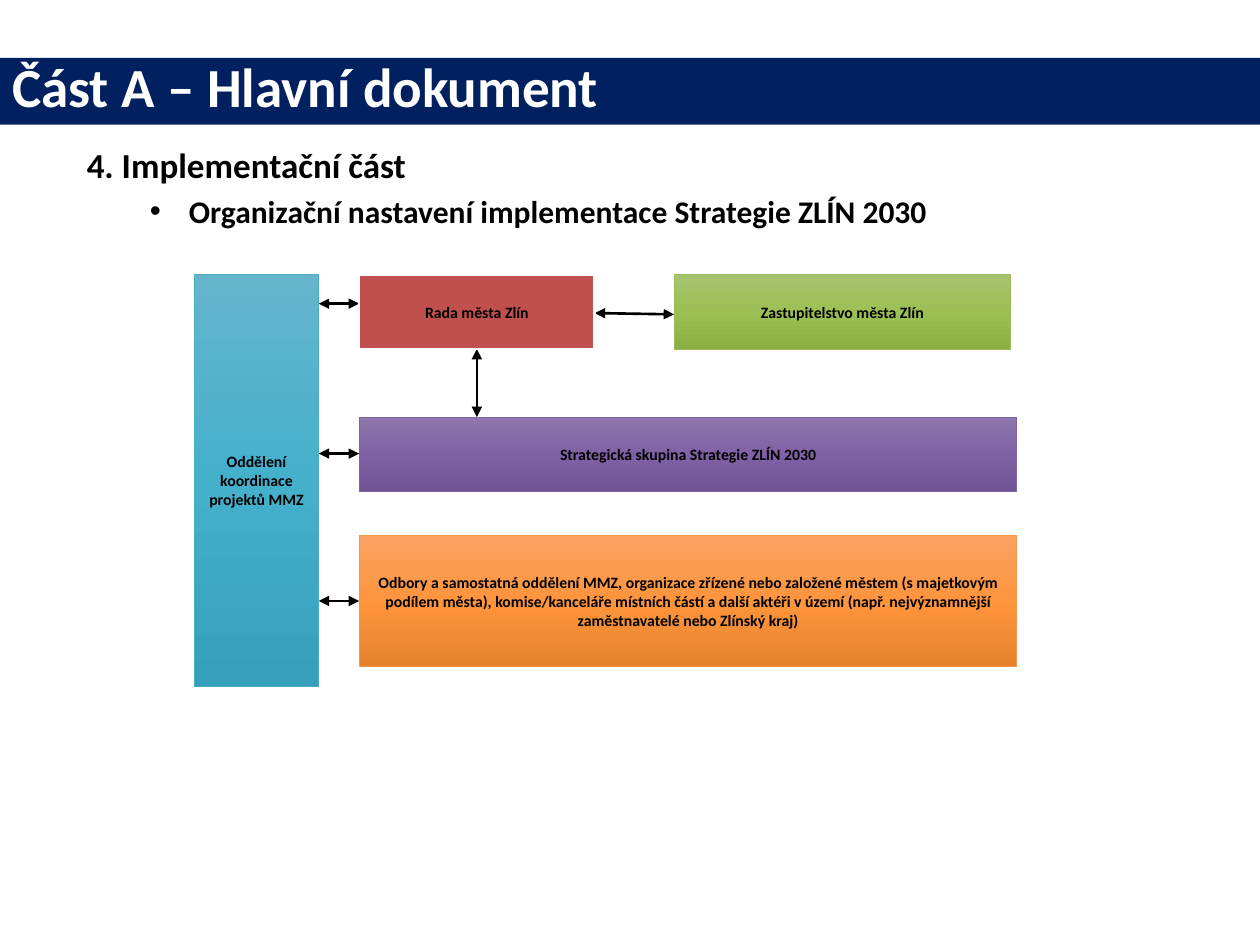
from lxml.etree import SubElement
from pptx import Presentation
from pptx.dml.color import RGBColor
from pptx.enum.shapes import MSO_CONNECTOR as Connector, MSO_SHAPE as Shape
from pptx.enum.text import MSO_ANCHOR as Anchor, PP_ALIGN as Align
from pptx.oxml.ns import qn
from pptx.util import Inches, Pt

WHITE = RGBColor(0xFF, 0xFF, 0xFF)
BLACK = RGBColor(0, 0, 0)
NAVY = RGBColor(0x00, 0x20, 0x60)
RED = RGBColor(0xC0, 0x50, 0x4D)
# Each gradient: top, middle and bottom colour
TEAL_SHADES = [RGBColor(0x65, 0xB5, 0xCD), RGBColor(0x45, 0xB0, 0xCC), RGBColor(0x35, 0x9F, 0xBC)]
PURPLE_SHADES = [RGBColor(0x8E, 0x77, 0xAC), RGBColor(0x80, 0x61, 0xA5), RGBColor(0x70, 0x52, 0x95)]
ORANGE_SHADES = [RGBColor(0xFA, 0xA2, 0x63), RGBColor(0xFF, 0x95, 0x3D), RGBColor(0xE5, 0x83, 0x2B)]
GREEN_SHADES = [RGBColor(0xA6, 0xC3, 0x6F), RGBColor(0x9D, 0xC0, 0x54), RGBColor(0x8C, 0xAF, 0x44)]
TEAL = RGBColor(0x4B, 0xAC, 0xC6)
PURPLE = RGBColor(0x80, 0x64, 0xA2)
ORANGE = RGBColor(0xF7, 0x96, 0x46)
GREEN = RGBColor(0x9B, 0xBB, 0x59)


def write(paragraph, text, size, color=BLACK, align=Align.LEFT, before=0, after=0, spacing=1.0):
    run = paragraph.add_run()
    run.text = text
    run.font.name = "Calibri"
    run.font.size = Pt(size)
    run.font.bold = True
    run.font.color.rgb = color
    paragraph.alignment = align
    paragraph.space_before = Pt(before)
    paragraph.space_after = Pt(after)
    paragraph.line_spacing = spacing


def indent(paragraph, margin, hanging, bullet=None):
    props = paragraph._p.get_or_add_pPr()
    props.set("marL", str(Inches(margin)))
    props.set("indent", str(-Inches(hanging)))
    if bullet:
        SubElement(props, qn("a:buFont"), typeface="Arial")
        SubElement(props, qn("a:buChar"), char=bullet)


def fill_gradient(fill, shades):
    """Fill from top to bottom with evenly spaced shades."""
    fill.gradient()
    fill.gradient_angle = 270
    stops = fill._xPr.find(qn("a:gradFill")).find(qn("a:gsLst"))
    for stop in list(stops):
        stops.remove(stop)
    for i, shade in enumerate(shades):
        position = 100000 * i // (len(shades) - 1)
        stop = SubElement(stops, qn("a:gs"), pos=str(position))
        SubElement(stop, qn("a:srgbClr"), val=str(shade))


def add_box(slide, left, top, width, height, fill, line=None, line_width=0.5):
    """Add a rectangle; fill is one colour or a list of gradient shades."""
    box = slide.shapes.add_shape(
        Shape.RECTANGLE, Inches(left), Inches(top), Inches(width), Inches(height))
    box.shadow.inherit = False
    if isinstance(fill, list):
        fill_gradient(box.fill, fill)
    else:
        box.fill.solid()
        box.fill.fore_color.rgb = fill
    if line is None:
        box.line.fill.background()
    else:
        box.line.color.rgb = line
        box.line.width = Pt(line_width)
    box.text_frame.word_wrap = True
    box.text_frame.vertical_anchor = Anchor.MIDDLE
    return box


def add_double_arrow(slide, x1, y1, x2, y2):
    arrow = slide.shapes.add_connector(
        Connector.STRAIGHT, Inches(x1), Inches(y1), Inches(x2), Inches(y2))
    arrow.line.color.rgb = BLACK
    arrow.line.width = Pt(1.5)
    line = arrow.line._get_or_add_ln()
    for end in ("a:headEnd", "a:tailEnd"):
        SubElement(line, qn(end), type="triangle")
    SubElement(arrow._element.spPr, qn("a:effectLst"))


def add_title_bar(slide, left, top, width, height):
    bar = add_box(slide, left, top, width, height, NAVY)
    write(bar.text_frame.paragraphs[0], "Část A – Hlavní dokument", 31.5, color=WHITE, spacing=0.8)


def add_outline(slide, left, top, width, height):
    frame = slide.shapes.add_textbox(
        Inches(left), Inches(top), Inches(width), Inches(height)).text_frame
    frame.word_wrap = True
    heading = frame.paragraphs[0]
    write(heading, "4. Implementační část", 20, before=4)
    indent(heading, 0.5, 0.5)
    point = frame.add_paragraph()
    point.level = 1
    write(point, "Organizační nastavení implementace Strategie ZLÍN 2030", 18, before=3.6)
    indent(point, 0.81, 0.31, bullet="•")


def add_organisation_diagram(slide, left, top, width, height):
    """Draw the coordination column, the bodies beside it and their links."""
    column_width, row_height = 0.99, 0.59
    council_width, assembly_width = 1.87, 2.67
    column_right = left + column_width
    bodies_left = left + 1.31
    bodies_width = left + width - bodies_left
    council_right = bodies_left + council_width
    council_middle = bodies_left + council_width / 2
    assembly_left = left + 3.81
    group_top, partners_top = top + 1.13, top + 2.07
    row_middle = top + row_height / 2

    add_double_arrow(slide, council_right, row_middle + 0.01, assembly_left, row_middle + 0.02)
    for link_y in (top + 0.23, top + 1.42, top + 2.59):
        add_double_arrow(slide, column_right, link_y, bodies_left, link_y)
    add_double_arrow(slide, council_middle, top + row_height, council_middle, group_top)

    boxes = [
        ("Oddělení koordinace projektů MMZ",
         left, top, column_width, height, TEAL_SHADES, TEAL, 0.5),
        ("Rada města Zlín",
         bodies_left, top, council_width, row_height, RED, WHITE, 1.5),
        ("Strategická skupina Strategie ZLÍN 2030",
         bodies_left, group_top, bodies_width, row_height, PURPLE_SHADES, PURPLE, 0.5),
        ("Odbory a samostatná oddělení MMZ, organizace zřízené nebo založené městem "
         "(s majetkovým podílem města), komise/kanceláře místních částí a další aktéři "
         "v území (např. nejvýznamnější zaměstnavatelé nebo Zlínský kraj)",
         bodies_left, partners_top, bodies_width, 1.04, ORANGE_SHADES, ORANGE, 0.5),
        ("Zastupitelstvo města Zlín",
         assembly_left, top, assembly_width, row_height, GREEN_SHADES, GREEN, 0.5),
    ]
    for label, *look in boxes:
        box = add_box(slide, *look)
        write(box.text_frame.paragraphs[0], label, 9, align=Align.CENTER, after=10)


def main():
    deck = Presentation()
    deck.slide_width, deck.slide_height = Inches(10), Inches(7.5)
    slide = deck.slides.add_slide(deck.slide_layouts[6])
    add_title_bar(slide, 0, 0.46, 10, 0.53)
    add_organisation_diagram(slide, 1.54, 2.18, 6.53, 3.27)
    add_outline(slide, 0.59, 1.09, 9.21, 6.43)
    deck.save("out.pptx")


if __name__ == "__main__":
    main()
